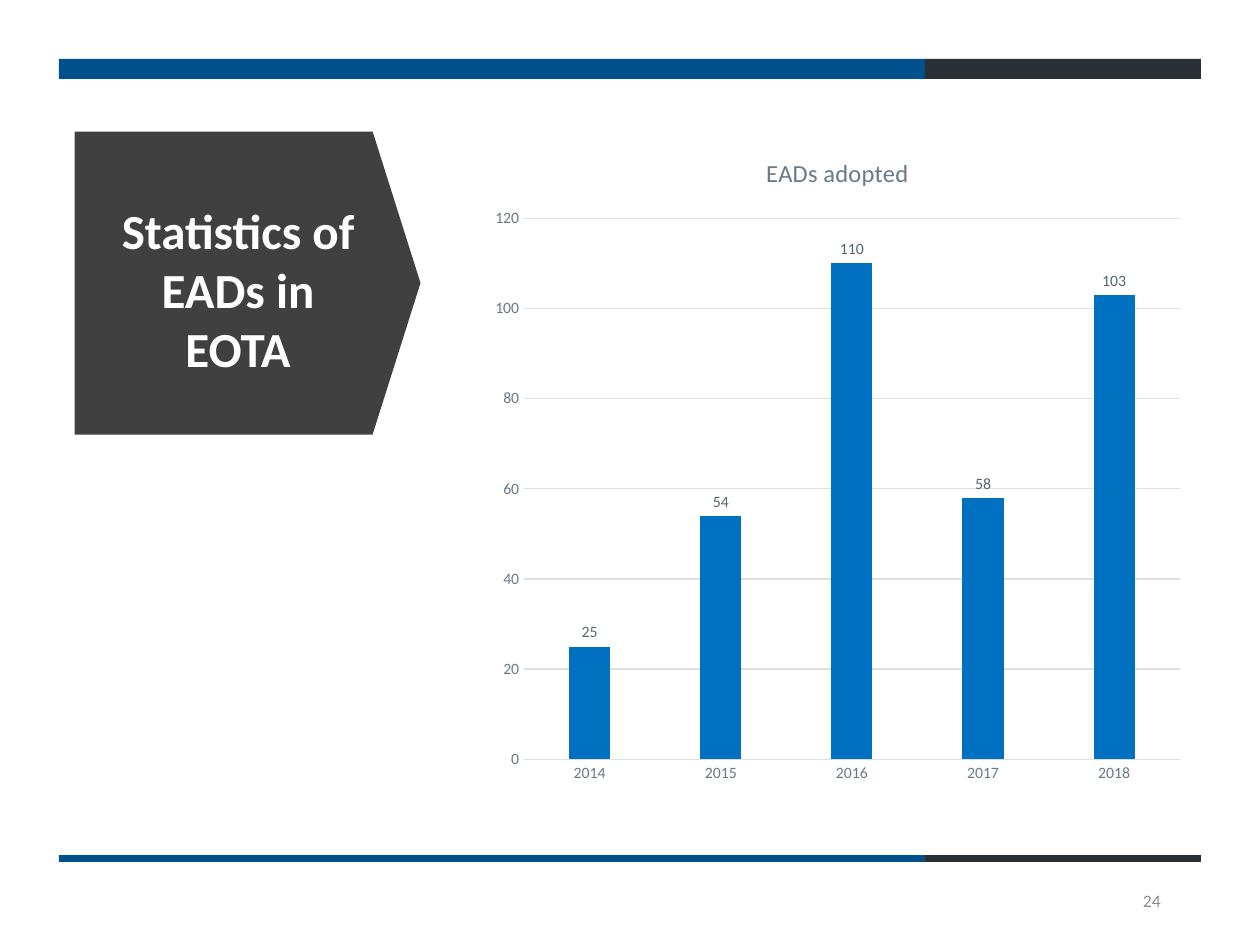
"""Build the slide with the yearly statistics of adopted EADs."""
from dataclasses import dataclass

from pptx import Presentation
from pptx.chart.data import CategoryChartData
from pptx.dml.color import RGBColor
from pptx.enum.chart import XL_CHART_TYPE as ChartType
from pptx.enum.chart import XL_LABEL_POSITION as LabelPosition
from pptx.enum.chart import XL_TICK_MARK as TickMark
from pptx.enum.shapes import MSO_SHAPE as Preset
from pptx.enum.text import MSO_ANCHOR as Anchor
from pptx.enum.text import MSO_AUTO_SIZE as AutoSize
from pptx.enum.text import PP_ALIGN as Align
from pptx.util import Emu, Pt

PX_PER_INCH = 126
FONT = "Calibri"
NAVY, SLATE, CHARCOAL, BLUE = "00518E", "282F35", "404040", "0070C0"
WHITE, GRAY, AXIS_TEXT, LABEL_TEXT, GRID = "FFFFFF", "8C8C8C", "677988", "556470", "DBE0E4"
ADOPTED = {"2014": 25, "2015": 54, "2016": 110, "2017": 58, "2018": 103}


@dataclass(frozen=True)
class Area:
    """Hold a rectangle in px."""
    left: int
    top: int
    width: int
    height: int

    def emu(self) -> tuple:
        """Return the four lengths in EMU."""
        return tuple(px(v) for v in (self.left, self.top, self.width, self.height))


@dataclass(frozen=True)
class Band:
    """Describe a two-coloured horizontal band."""
    top: int
    height: int


BANDS = (Band(59, 20), Band(855, 7))
BAND_PARTS = ((59, 867, NAVY), (925, 276, SLATE))


def px(value: int) -> Emu:
    """Turn px into EMU."""
    return Emu(round(value * 914400 / PX_PER_INCH))


def color(value: str) -> RGBColor:
    """Turn a hex string into a colour."""
    return RGBColor.from_string(value)


def set_all(target, values: dict) -> None:
    """Set every attribute named in a dict."""
    for name, value in values.items():
        setattr(target, name, value)


def style_font(font, size: int, ink: str, bold: bool = False) -> None:
    """Give a font its face, size, weight and colour."""
    set_all(font, {"name": FONT, "size": Pt(size), "bold": bold})
    font.color.rgb = color(ink)


def draw_shape(page, preset, area: Area, fill: str):
    """Draw a plain filled shape without outline."""
    shape = page.shapes.add_shape(preset, *area.emu())
    shape.shadow.inherit = False
    shape.fill.solid()
    shape.fill.fore_color.rgb = color(fill)
    shape.line.fill.background()
    return shape


def draw_band(page, band: Band) -> None:
    """Draw both parts of a band."""
    for left, width, fill in BAND_PARTS:
        draw_shape(page, Preset.RECTANGLE, Area(left, band.top, width, band.height), fill)


def draw_arrow(page) -> None:
    """Draw the block that points from the title to the chart."""
    arrow = draw_shape(page, Preset.DOWN_ARROW, Area(96, 110, 303, 346), CHARCOAL)
    arrow.rotation = 270
    arrow.adjustments[0] = 1
    arrow.adjustments[1] = 0.158


def write_text(box, area: Area, text: str, align, size: int, ink: str, bold: bool = False) -> None:
    """Place a text box and write one paragraph into it."""
    set_all(box, dict(zip(("left", "top", "width", "height"), area.emu())))
    set_all(box.text_frame, {"word_wrap": True, "auto_size": AutoSize.NONE,
                             "vertical_anchor": Anchor.MIDDLE})
    para = box.text_frame.paragraphs[0]
    para.alignment = align
    span = para.add_run()
    span.text = text
    style_font(span.font, size, ink, bold)


def style_line(line) -> None:
    """Give a chart line the grid colour and width."""
    line.color.rgb = color(GRID)
    line.width = Pt(0.75)


def draw_chart(page, area: Area) -> None:
    """Draw the column chart of adopted EADs."""
    data = CategoryChartData()
    data.categories = list(ADOPTED)
    data.add_series("EADs adopted", list(ADOPTED.values()))
    chart = page.shapes.add_chart(ChartType.COLUMN_CLUSTERED, *area.emu(), data).chart
    style_font(chart.font, 10, SLATE)
    set_all(chart, {"has_legend": False, "has_title": True})
    heading = chart.chart_title.text_frame
    heading.text = "EADs adopted"
    style_font(heading.paragraphs[0].runs[0].font, 14, AXIS_TEXT)

    for axis in (chart.category_axis, chart.value_axis):
        set_all(axis, {"major_tick_mark": TickMark.NONE, "minor_tick_mark": TickMark.NONE})
        style_font(axis.tick_labels.font, 9, AXIS_TEXT)
    style_line(chart.category_axis.format.line)
    set_all(chart.value_axis, {"minimum_scale": 0, "maximum_scale": 120, "major_unit": 20,
                               "has_major_gridlines": True})
    style_line(chart.value_axis.major_gridlines.format.line)
    chart.value_axis.format.line.fill.background()

    plot = chart.plots[0]
    set_all(plot, {"gap_width": 219, "overlap": -27, "vary_by_categories": False})
    series = plot.series[0]
    series.format.fill.solid()
    series.format.fill.fore_color.rgb = color(BLUE)
    labels = series.data_labels
    set_all(labels, {"show_value": True, "position": LabelPosition.OUTSIDE_END})
    style_font(labels.font, 9, LABEL_TEXT)


def main() -> None:
    """Build and save the deck."""
    deck = Presentation()
    set_all(deck, {"slide_width": px(1260), "slide_height": px(945)})
    page = deck.slides.add_slide(deck.slide_layouts[5])
    for band in BANDS:
        draw_band(page, band)
    draw_arrow(page)
    title = page.shapes.title
    page.shapes.element.append(title.element)
    write_text(title, Area(100, 166, 276, 246), "Statistics of EADs in EOTA",
               Align.CENTER, 28, WHITE, True)
    number = page.shapes.add_textbox(*Area(1067, 876, 106, 50).emu())
    write_text(number, Area(1067, 876, 106, 50), "24", Align.RIGHT, 10, GRAY)
    draw_chart(page, Area(481, 131, 713, 665))
    deck.save("out.pptx")


if __name__ == "__main__":
    main()
